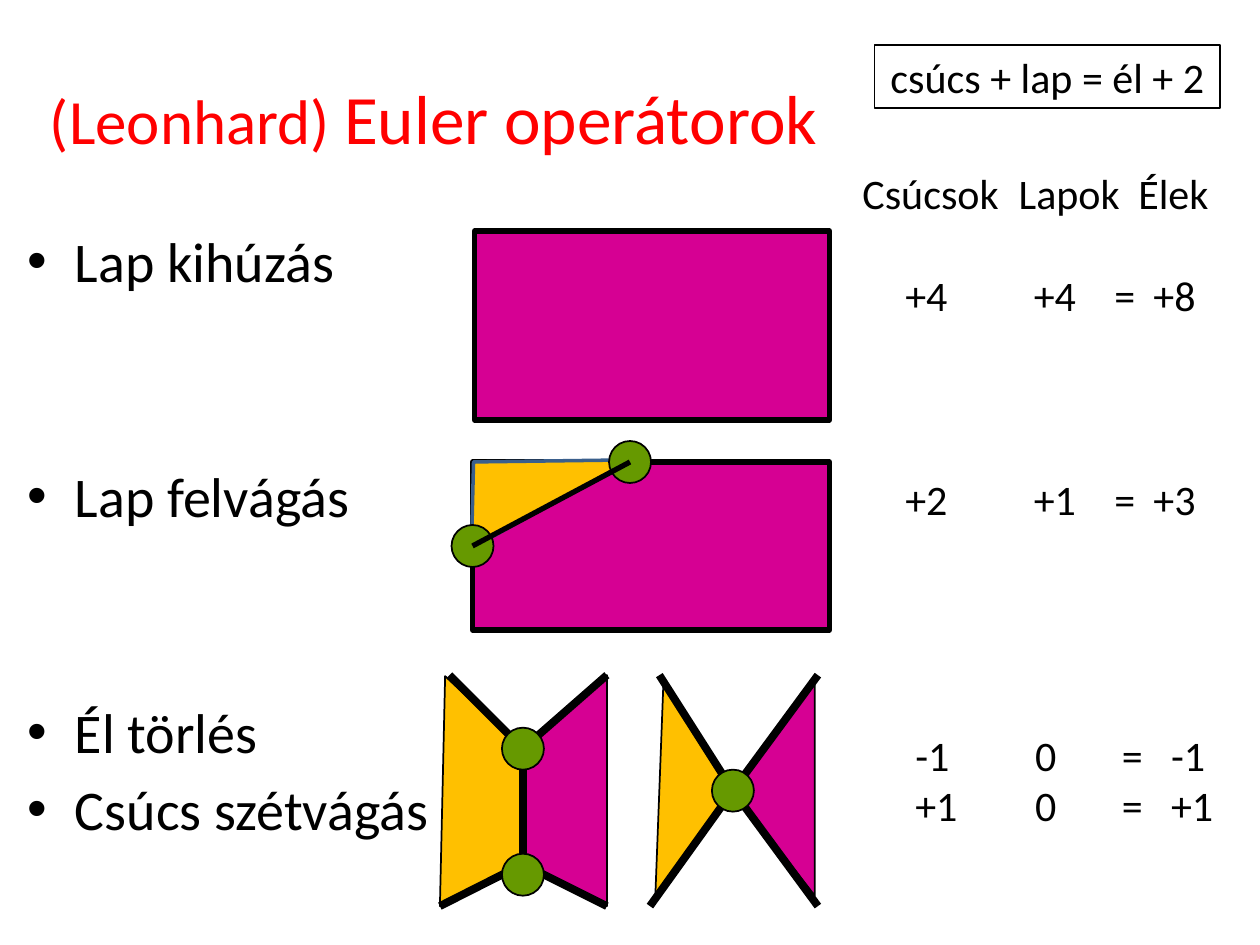
from dataclasses import dataclass
from typing import Optional
from lxml.etree import SubElement
from pptx import Presentation
from pptx.dml.color import RGBColor as RGB
from pptx.enum.shapes import MSO_CONNECTOR as CONN, MSO_SHAPE as SHAPE
from pptx.enum.text import MSO_ANCHOR as ANCHOR, MSO_AUTO_SIZE as AUTO, PP_ALIGN as ALIGN
from pptx.oxml.ns import qn
from pptx.util import Emu, Inches, Pt

COLORS = {"face": "D60093", "cut": "FFC000", "vertex": "669900",
          "ink": "000000", "blue": "3A5F8C", "title": "FF0000"}
COLS, ROWS = 120, 90
RADIUS = 2
TABLE_LINE = 29.3
BODY_LINE, BODY_GAP = 39, 6

prs = Presentation()
prs.slide_width, prs.slide_height = Inches(10), Inches(7.5)
slide = prs.slides.add_slide(prs.slide_layouts[5])


@dataclass
class Block:
    col: float
    row: float
    cols: float
    rows: float
    kind: SHAPE = SHAPE.RECTANGLE
    fill: Optional[str] = "face"
    width: float = 3


@dataclass
class Patch:
    points: list
    fill: str
    line: str = "ink"
    width: float = 1


@dataclass
class Edge:
    start: tuple
    end: tuple
    width: float = 4.5


@dataclass
class Row:
    cells: list
    stops: list
    blanks: int = 0


def x(col: float) -> Emu:
    return Emu(round(prs.slide_width * col / COLS))


def y(row: float) -> Emu:
    return Emu(round(prs.slide_height * row / ROWS))


def rgb(name: str) -> RGB:
    return RGB.from_string(COLORS[name])


def set_all(obj, **values) -> None:
    for name, value in values.items():
        setattr(obj, name, value)


def paint(sp, fill: Optional[str], line: str, width: float) -> None:
    sp.shadow.inherit = False
    if fill:
        sp.fill.solid()
        sp.fill.fore_color.rgb = rgb(fill)
    else:
        sp.fill.background()
    sp.line.color.rgb = rgb(line)
    sp.line.width = Pt(width)


def draw_block(b: Block):
    sp = slide.shapes.add_shape(b.kind, x(b.col), y(b.row), x(b.cols), y(b.rows))
    paint(sp, b.fill, "ink", b.width)
    return sp


def draw_patch(patch: Patch) -> None:
    first, *rest = [(x(c), y(r)) for c, r in patch.points]
    builder = slide.shapes.build_freeform(*first)
    builder.add_line_segments(rest, close=True)
    paint(builder.convert_to_shape(), patch.fill, patch.line, patch.width)


def draw_edge(e: Edge) -> None:
    (c1, r1), (c2, r2) = e.start, e.end
    line = slide.shapes.add_connector(CONN.STRAIGHT, x(c1), y(r1), x(c2), y(r2))
    line.line.color.rgb = rgb("ink")
    line.line.width = Pt(e.width)
    SubElement(line._element.spPr, qn("a:effectLst"))


def vertex(center: tuple) -> Block:
    col, row = center
    return Block(col - RADIUS, row - RADIUS, 2 * RADIUS, 2 * RADIUS, SHAPE.OVAL, "vertex", 1)


def add_run(p, text: str, size: float, color: str = "ink") -> None:
    r = p.add_run()
    r.text = text
    set_all(r.font, name="Calibri", size=Pt(size))
    r.font.color.rgb = rgb(color)


def add_box(col: float, row: float, cols: float, rows: float):
    tf = slide.shapes.add_textbox(x(col), y(row), x(cols), y(rows)).text_frame
    tf.word_wrap = True
    return tf


def paragraphs(tf, count: int) -> list:
    return [tf.paragraphs[0]] + [tf.add_paragraph() for _ in range(count - 1)]


def add_title() -> None:
    sp = slide.shapes.title
    set_all(sp, left=x(2.4), top=y(3.6), width=x(77.8), height=y(15))
    tf = sp.text_frame
    set_all(tf, auto_size=AUTO.NONE, vertical_anchor=ANCHOR.MIDDLE)
    p = tf.paragraphs[0]
    p.alignment = ALIGN.CENTER
    add_run(p, "(Leonhard) ", 36, "title")
    add_run(p, "Euler operátorok", 39.6, "title")


def add_operators() -> None:
    items = [("Lap kihúzás", 0), ("Lap felvágás", 2), ("Él törlés", 2), ("Csúcs szétvágás", 0)]
    tf = add_box(1.4, 21, 102, 67)
    for i, (p, (text, blanks)) in enumerate(zip(paragraphs(tf, len(items)), items)):
        gap = BODY_GAP + blanks * (BODY_LINE + BODY_GAP) if i else 0
        p.space_before = Pt(gap)
        add_run(p, text, 32)
        pPr = p._p.get_or_add_pPr()
        pPr.set("marL", str(Inches(0.38)))
        pPr.set("indent", str(-Inches(0.38)))
        SubElement(pPr, qn("a:buFont"), typeface="Arial")
        SubElement(pPr, qn("a:buChar"), char="•")


def add_counts() -> None:
    wide, narrow = [0.37, 1.39, 2.03, 2.34], [0.45, 1.4, 2.09, 2.48]
    rows = [Row(["Csúcsok", "Lapok", "Élek"], [0.03, 1.27, 2.22]),
            Row(["+4", "+4", "=", "+8"], wide, 1),
            Row(["+2", "+1", "=", "+3"], wide, 3),
            Row(["-1", "0", "=", "-1"], narrow, 4),
            Row(["+1", "0", "=", "+1"], narrow)]
    tf = add_box(80.6, 15.4, 38.2, 64.2)
    for p, row in zip(paragraphs(tf, len(rows)), rows):
        p.space_before = Pt(row.blanks * TABLE_LINE)
        add_run(p, "".join("\t" + cell for cell in row.cells), 24)
        tabs = SubElement(p._p.get_or_add_pPr(), qn("a:tabLst"))
        for stop in row.stops:
            SubElement(tabs, qn("a:tab"), pos=str(Inches(stop)), algn="l")


def add_formula() -> None:
    sp = draw_block(Block(83.3, 4.3, 32.9, 6, fill=None, width=0.75))
    tf = sp.text_frame
    set_all(tf, word_wrap=False, vertical_anchor=ANCHOR.TOP)
    p = tf.paragraphs[0]
    p.alignment = ALIGN.CENTER
    add_run(p, "csúcs + lap = él + 2", 24)


def main() -> None:
    cut_top, cut_left = (60, 44), (45, 52)
    upper, lower, merged = (49.8, 71.3), (49.8, 82.3), (69.8, 75.3)
    split_ends = [((57.8, 64.3), upper), ((42.8, 64.3), upper),
                  ((41.9, 86.3), lower), ((57.8, 86.3), lower)]
    merged_ends = [(77.9, 64.3), (62.8, 64.3), (61.9, 86.3), (77.9, 86.3)]

    add_title()
    add_operators()
    draw_block(Block(45, 44, 34, 16))
    for patch in [
        Patch([(45.1, 44), (44.9, 52.2), (60.2, 43.8)], "cut", "blue", 2),
        Patch([merged, (63.2, 64.7), (62.4, 85.8)], "cut"),
        Patch([(77.6, 64.3), merged, (77.6, 85.3)], "face"),
        Patch([(57.8, 64.3), upper, lower, (57.8, 86.3)], "face"),
        Patch([(42.4, 64.4), upper, lower, (41.9, 86.3)], "cut"),
    ]:
        draw_patch(patch)
    for center in (cut_top, cut_left):
        draw_block(vertex(center))
    draw_edge(Edge(cut_top, cut_left, 3))
    for start, end in [(upper, lower), *split_ends, *((end, merged) for end in merged_ends)]:
        draw_edge(Edge(start, end))
    for center in (upper, (49.8, 83.3), merged):
        draw_block(vertex(center))
    draw_block(Block(45.2, 22, 33.8, 18))
    add_counts()
    add_formula()
    prs.save("out.pptx")


if __name__ == "__main__":
    main()
